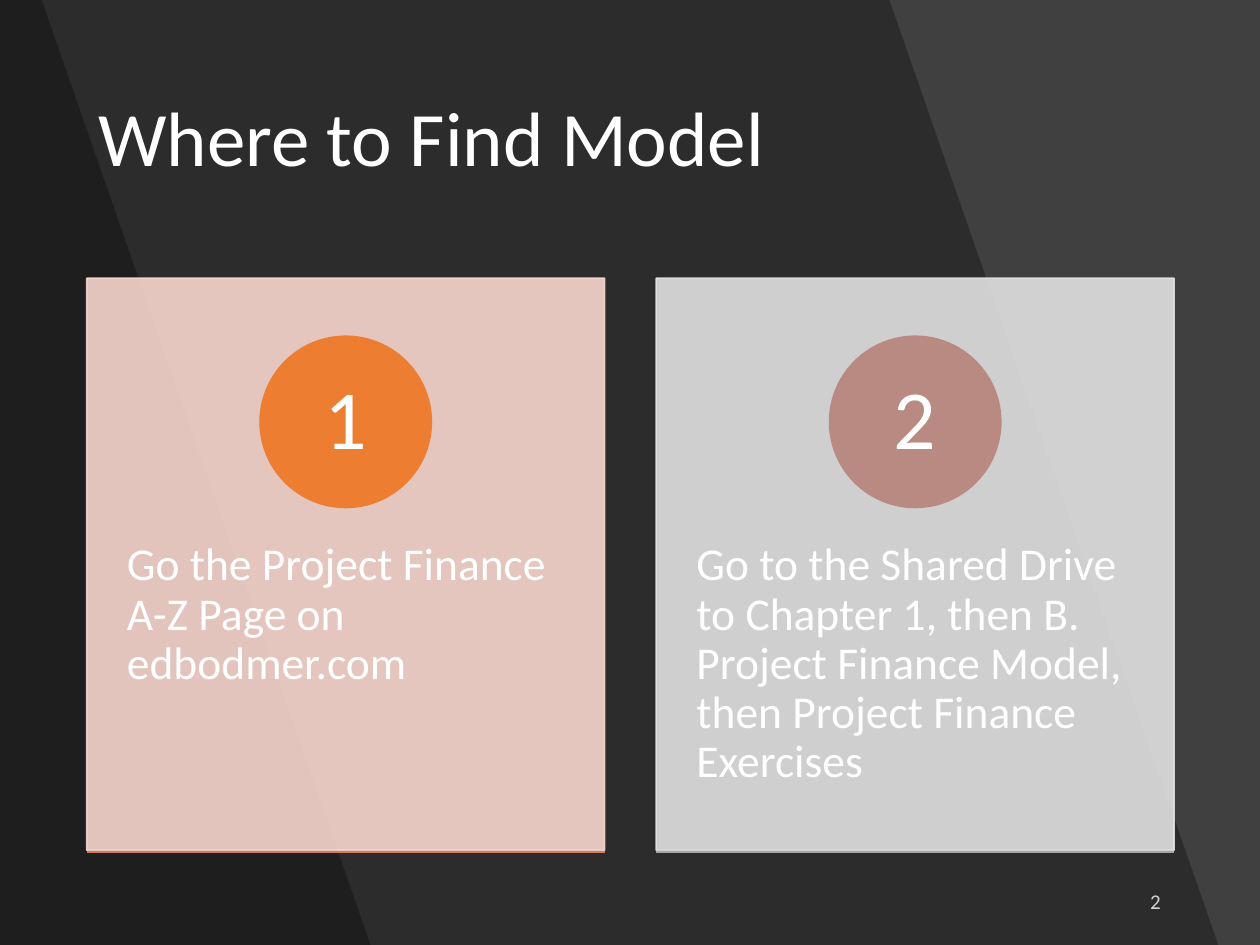
from lxml.etree import SubElement
from pptx import Presentation
from pptx.dml.color import RGBColor
from pptx.enum.shapes import MSO_CONNECTOR, MSO_SHAPE
from pptx.enum.text import MSO_ANCHOR, PP_ALIGN
from pptx.oxml.ns import qn
from pptx.util import Cm, Pt

THEME = {
    "font": "Calibri", "text": "FFFFFF", "background": "404040", "band": "000000",
    "title_size": 44, "number_size": 48, "body_size": 26, "footer_size": 12,
    "cards": [("F8D7CE", "ED7D31", "D17B5C"), ("E1E1E1", "B98A82", "A5A5A5")],
}
STEPS = [
    "Go the Project Finance A-Z Page on edbodmer.com",
    "Go to the Shared Drive to Chapter 1, then B. Project Finance Model, "
    "then Project Finance Exercises",
]


def paint(fill, color, opacity=100):
    fill.solid()
    fill.fore_color.rgb = RGBColor.from_string(color)
    if opacity < 100:
        SubElement(fill._xPr.find(".//" + qn("a:srgbClr")), qn("a:alpha"), val=str(opacity * 1000))


def write(text, place, size, align=PP_ALIGN.LEFT, anchor=MSO_ANCHOR.MIDDLE,
          insets=(0.25, 0.13), opacity=100, spacing=0.9):
    box = page.shapes.add_textbox(*map(Cm, place))
    side, edge = map(Cm, insets)
    frame_format = {
        "word_wrap": True, "vertical_anchor": anchor,
        "margin_left": side, "margin_right": side,
        "margin_top": edge, "margin_bottom": edge,
    }
    for name, value in frame_format.items():
        setattr(box.text_frame, name, value)
    para = box.text_frame.paragraphs[0]
    para.alignment = align
    para.line_spacing = spacing
    span = para.add_run()
    for name, value in {"name": THEME["font"], "size": Pt(size)}.items():
        setattr(span.font, name, value)
    span.text = text
    paint(span.font.fill, THEME["text"], opacity)


deck = Presentation()
deck.slide_width, deck.slide_height = Cm(25.4), Cm(19.05)
page = deck.slides.add_slide(deck.slide_layouts[6])
paint(page.background.fill, THEME["background"])

for top_right, bottom_right in [(17.93, 24.56), (0.84, 7.47)]:
    outline = page.shapes.build_freeform(0, 0)
    corners = [(top_right, 0), (bottom_right, 19.05), (0, 19.05)]
    outline.add_line_segments([(Cm(x), Cm(y)) for x, y in corners], close=True)
    band = outline.convert_to_shape()
    band.shadow.inherit = False
    band.line.fill.background()
    paint(band.fill, THEME["band"], 30)

card_width, card_pitch, circle_size, number_size = 10.44, 11.48, 3.45, 2.44
for index, (step, colors) in enumerate(zip(STEPS, THEME["cards"])):
    card_color, circle_color, rule_color = colors
    left = 1.75 + index * card_pitch
    circle_left = left + (card_width - circle_size) / 2
    number_left = left + (card_width - number_size) / 2

    card = page.shapes.add_shape(MSO_SHAPE.RECTANGLE, Cm(left), Cm(5.61), Cm(card_width), Cm(11.53))
    circle = page.shapes.add_shape(
        MSO_SHAPE.OVAL, Cm(circle_left), Cm(6.78), Cm(circle_size), Cm(circle_size))
    for shape, color, opacity in [(card, card_color, 90), (circle, circle_color, 100)]:
        shape.shadow.inherit = False
        shape.line.width = Pt(1)
        paint(shape.fill, color, opacity)
        paint(shape.line.fill, color, opacity)

    write(step, (left, 10.01, card_width, 6.93), THEME["body_size"],
          anchor=MSO_ANCHOR.TOP, insets=(0.81, 0.91))
    write(str(index + 1), (number_left, 7.29, number_size, number_size), THEME["number_size"],
          align=PP_ALIGN.CENTER, insets=(0.28, 0.03))

    rule = page.shapes.add_connector(
        MSO_CONNECTOR.STRAIGHT, Cm(left), Cm(17.17), Cm(left + card_width), Cm(17.17))
    rule.line.width = Pt(1)
    paint(rule.line.fill, rule_color)
    SubElement(rule._element.spPr, qn("a:effectLst"))

write("Where to Find Model", (1.73, 1.02, 21.92, 3.68), THEME["title_size"])
write("2", (17.93, 17.65, 5.72, 1.02), THEME["footer_size"],
      align=PP_ALIGN.RIGHT, opacity=80, spacing=1.0)

deck.save("out.pptx")
